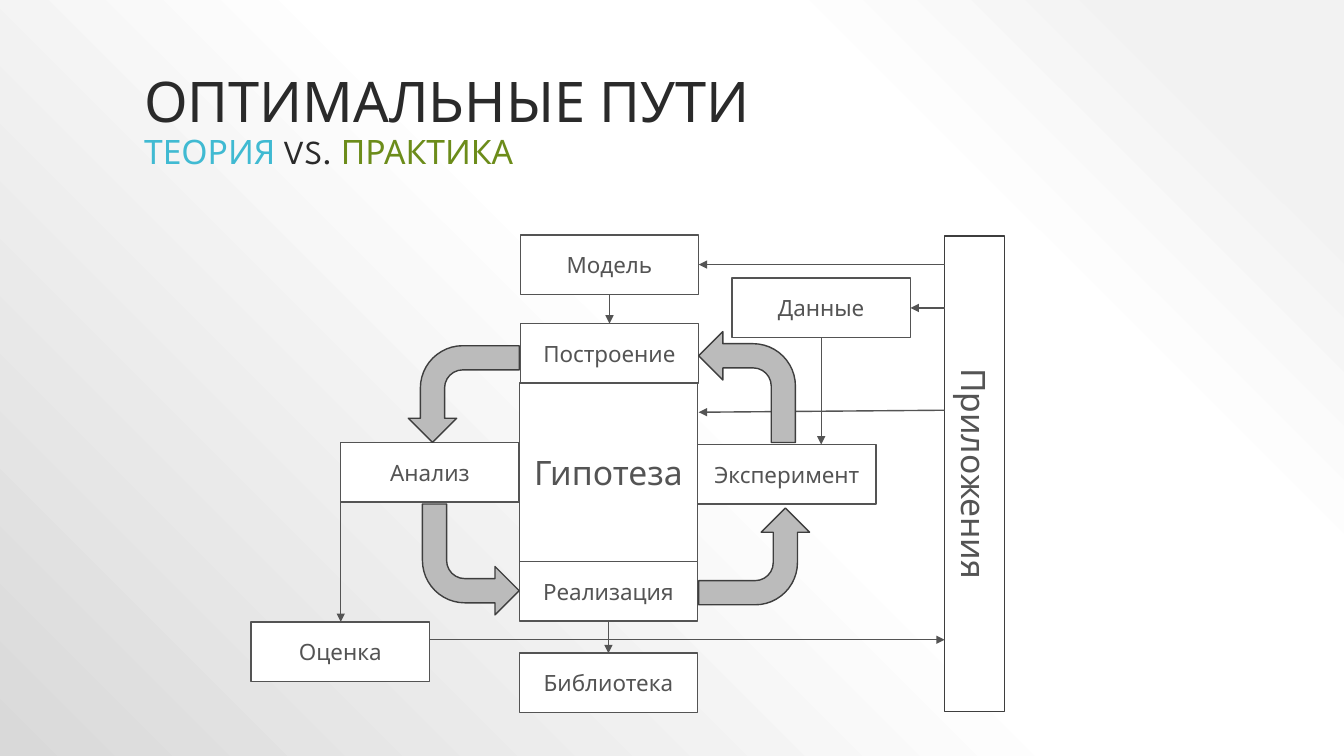
from lxml import etree
from pptx import Presentation
from pptx.dml.color import RGBColor
from pptx.enum import shapes, text
from pptx.oxml import parse_xml
from pptx.oxml.ns import nsdecls, qn
from pptx.util import Inches, Pt

FONT = "League Spartan"
DARK = RGBColor(0x2A, 0x2A, 0x2A)
GRAY = RGBColor(0x54, 0x54, 0x54)
OUTLINE = RGBColor(0x3E, 0x3E, 0x3E)
ARROW = RGBColor(0xBB, 0xBB, 0xBB)
WHITE = RGBColor(0xFF, 0xFF, 0xFF)
BLUE = RGBColor(0x40, 0xBA, 0xD2)
GREEN = RGBColor(0x6C, 0x8C, 0x1A)

# Content
TITLE = [("ОПТИМАЛЬНЫЕ ПУТИ\v", 40, DARK), ("ТЕОРИЯ ", 24, BLUE),
         ("VS. ", 24, DARK), ("ПРАКТИКА", 24, GREEN)]
BACKGROUND = [(10, "F2F2F2"), (28, "FFFFFF"), (48, "FFFFFF"), (100, "D9D9D9")]

W, H = 1.77, 0.59  # one step of the diagram
STEPS = {"Построение": (5.16, 3.21), "Модель": (5.16, 2.33),
         "Анализ": (3.38, 4.39), "Реализация": (5.15, 5.57),
         "Библиотека": (5.15, 6.48), "Эксперимент": (6.92, 4.41),
         "Данные": (7.26, 2.76), "Оценка": (2.49, 6.17)}
BOXES = {"Приложения": (9.37, 2.34, H, 4.72), "Гипотеза": (5.15, 3.8, W, W)}
BOXES.update({name: (x, y, W, H) for name, (x, y) in STEPS.items()})
LARGE = ("Приложения", "Гипотеза")

# Bent arrows of the cycle: left, top, rotation
CYCLE_SIZE = (0.96, 1.1)
CYCLE = [(6.93, 3.29, 0), (4.12, 3.36, 270), (4.19, 5, 180), (7, 4.97, 90)]


def spot(name, fx, fy):
    """Point of a box, as fractions of its width and height."""
    x, y, w, h = BOXES[name]
    return x + fx * w, y + fy * h


def down(start, end, fx=0.5):
    x, y = spot(start, fx, 1)
    return (x, y), (x, BOXES[end][1])


def from_apps(end):
    x, y = spot(end, 1, 0.5)
    return (BOXES["Приложения"][0], y), (x, y)


apps_x = BOXES["Приложения"][0]
LINKS = [
    ((apps_x, 4.07), (6.93, 4.09)),
    from_apps("Модель"),
    from_apps("Данные"),
    down("Модель", "Построение"),
    down("Реализация", "Библиотека"),
    down("Данные", "Эксперимент"),
    down("Анализ", "Оценка", 0),
    (spot("Оценка", 1, 0.3), (apps_x, spot("Оценка", 1, 0.3)[1])),
]

prs = Presentation()
prs.slide_width, prs.slide_height = Inches(13.33), Inches(7.5)
s = prs.slides.add_slide(prs.slide_layouts[5])


def add_shape(kind, box, fill, line):
    sp = s.shapes.add_shape(kind, *map(Inches, box))
    sp.shadow.inherit = False
    sp.fill.solid()
    sp.fill.fore_color.rgb = fill
    sp.line.color.rgb = line
    sp.line.width = Pt(1)
    return sp


# Background
stops = "".join(f'<a:gs pos="{pos * 1000}"><a:srgbClr val="{color}"/></a:gs>'
                for pos, color in BACKGROUND)
s.element.cSld.insert(0, parse_xml(
    f'<p:bg {nsdecls("p", "a")}><p:bgPr><a:gradFill rotWithShape="1">'
    f'<a:gsLst>{stops}</a:gsLst><a:path path="circle">'
    '<a:fillToRect l="100000" b="100000"/></a:path></a:gradFill>'
    '<a:effectLst/></p:bgPr></p:bg>'))

# Title
title = s.shapes.title
title.left, title.top, title.width, title.height = map(
    Inches, (1.33, 0.3, 10.67, 1.45))
tf = title.text_frame
tf.auto_size = text.MSO_AUTO_SIZE.NONE
tf.word_wrap = True
tf.vertical_anchor = text.MSO_ANCHOR.BOTTOM
p = tf.paragraphs[0]
p.alignment = text.PP_ALIGN.LEFT
p.line_spacing = 0.9
for words, size, color in TITLE:
    r = p.add_run()
    r.text = words.rstrip("\v")
    r.font.name, r.font.size = FONT, Pt(size)
    r.font.color.rgb = color
    if words.endswith("\v"):
        p.add_line_break()

# Boxes
for name, box in BOXES.items():
    apps = name == "Приложения"
    sp = add_shape(shapes.MSO_SHAPE.RECTANGLE, box, WHITE,
                   OUTLINE if apps else GRAY)
    tf = sp.text_frame
    tf.vertical_anchor = text.MSO_ANCHOR.MIDDLE
    if apps:
        tf._txBody.bodyPr.set("vert", "vert")
    p = tf.paragraphs[0]
    p.text = name
    p.alignment = text.PP_ALIGN.CENTER
    p.font.name, p.font.size = FONT, Pt(24 if name in LARGE else 16)
    p.font.color.rgb = GRAY

# Links
for start, end in LINKS:
    link = s.shapes.add_connector(shapes.MSO_CONNECTOR.STRAIGHT,
                                  *map(Inches, start + end))
    link.line.color.rgb = GRAY
    link.line.width = Pt(1)
    etree.SubElement(link.line._get_or_add_ln(), qn("a:tailEnd"), type="triangle")
    etree.SubElement(link._element.spPr, qn("a:effectLst"))

# Cycle arrows
for x, y, turn in CYCLE:
    sp = add_shape(shapes.MSO_SHAPE.BENT_ARROW, (x, y, *CYCLE_SIZE), ARROW, OUTLINE)
    sp.rotation = turn
    sp._element.spPr.find(qn("a:xfrm")).set("flipH", "1")

prs.save("out.pptx")
